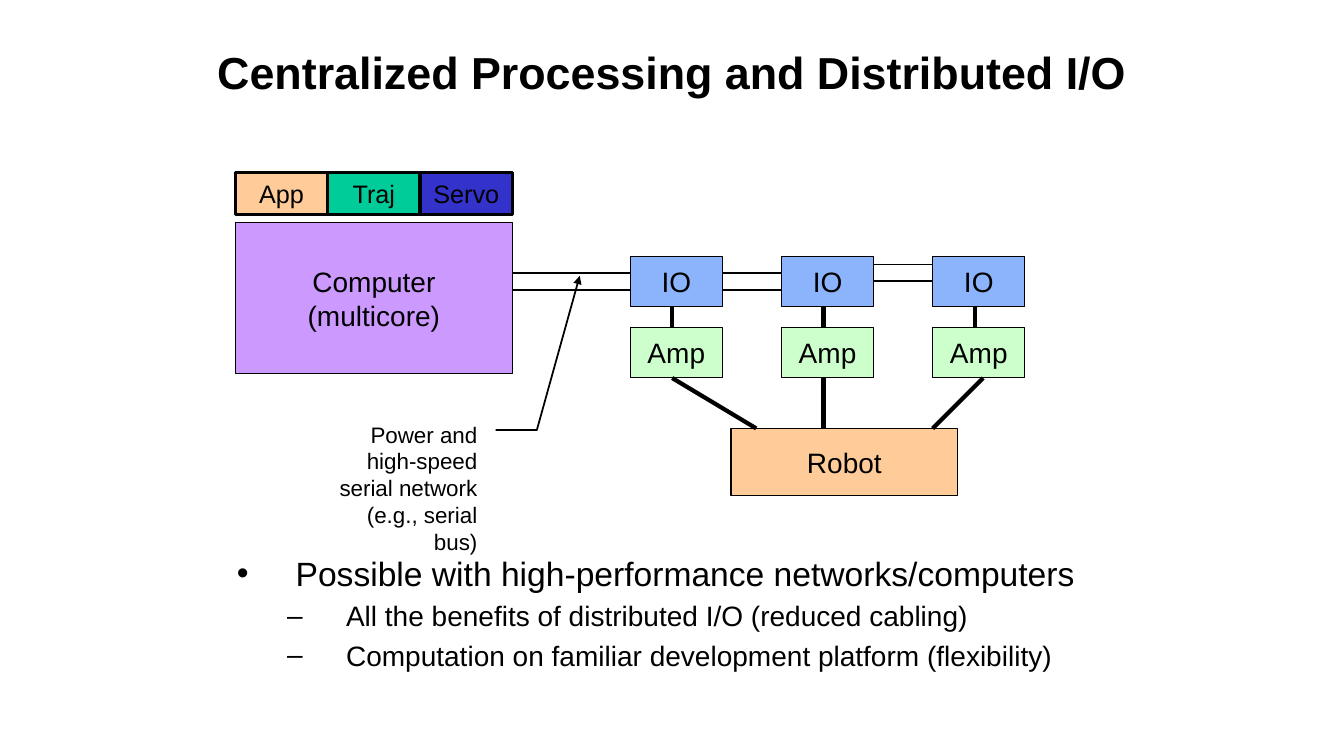
from lxml.etree import SubElement
from pptx import Presentation
from pptx.dml.color import RGBColor
from pptx.enum.shapes import MSO_CONNECTOR, MSO_SHAPE
from pptx.enum.text import MSO_ANCHOR, PP_ALIGN
from pptx.oxml.ns import qn
from pptx.util import Inches, Pt

HUES = {"ink": "000000", "computer": "CC99FF", "io": "8BB4FD", "amp": "CCFFCC",
        "peach": "FFCC99", "traj": "00CC99", "servo": "3333CC"}
INK = RGBColor.from_string(HUES["ink"])

deck = Presentation()
deck.slide_width, deck.slide_height = Inches(13.33), Inches(7.5)
slide = deck.slides.add_slide(deck.slide_layouts[5])
shapes = slide.shapes
UNIT = Inches(1) / 12  # grid step


def write(shape, text, size=20, bold=False, align=PP_ALIGN.CENTER,
          anchor=MSO_ANCHOR.MIDDLE, wrap=True, marks=""):
    frame = shape.text_frame
    frame.word_wrap = wrap
    frame.vertical_anchor = anchor
    frame.text = text
    for i, para in enumerate(frame.paragraphs):
        para.alignment = align
        if marks:
            para.level = min(i, 1)
            props = para._p.get_or_add_pPr()
            props.set("marL", str(int(UNIT * (13 if i else 7))))
            props.set("indent", str(int(-UNIT * 7)))
            SubElement(props, qn("a:buFont")).set("typeface", "Arial")
            SubElement(props, qn("a:buChar")).set("char", marks[i])
            if i:
                para.space_before = Pt(4)
        para.font.name = "Arial"
        para.font.size = Pt(size if i == 0 or not marks else size - 4)
        para.font.bold = bold
        para.font.color.rgb = INK


def draw(kind, *place, fill=None, width=0.75):
    a, b, c, d = [int(n * UNIT) for n in place]
    if kind == "line":
        item = shapes.add_connector(MSO_CONNECTOR.STRAIGHT, a, b, c, d)
        SubElement(item._element.spPr, qn("a:effectLst"))
    else:
        item = shapes.add_shape(kind, a, b, c, d)
        item.shadow.inherit = False
        if fill:
            item.fill.solid()
            item.fill.fore_color.rgb = RGBColor.from_string(HUES[fill])
        else:
            item.fill.background()
    item.line.color.rgb = INK
    item.line.width = Pt(width)
    return item


# Title
title = shapes.title
title.left, title.top, title.width, title.height = [
    int(n * UNIT) for n in (12, 3, 136, 11)]
write(title, "Centralized Processing and Distributed I/O", size=32, bold=True)

# Bullets
body = shapes.add_textbox(*[int(n * UNIT) for n in (27, 65.25, 105, 17)])
write(body, "Possible with high-performance networks/computers\n"
      "All the benefits of distributed I/O (reduced cabling)\n"
      "Computation on familiar development platform (flexibility)",
      size=24, align=PP_ALIGN.LEFT, anchor=MSO_ANCHOR.TOP, marks="•––")

# Computer and robot
BOX = MSO_SHAPE.RECTANGLE
host = draw(BOX, 28, 26.5, 33, 18, fill="computer")
write(host, "Computer\n(multicore)", wrap=False)
robot = draw(BOX, 87, 51, 27, 8, fill="peach")
write(robot, "Robot")

# Joints: IO over amp, bus rails from the left, cable to the robot
JOINTS = [(61, 32.5, 90, 80), (86, 32.5, 98, 98), (104, 31.5, 111, 117)]
for col, (start, rail, foot, top) in enumerate(JOINTS):
    left = 75 + 18 * col
    write(draw(BOX, left, 30.5, 11, 6, fill="io"), "IO", wrap=False)
    write(draw(BOX, left, 39, 11, 6, fill="amp"), "Amp")
    draw("line", left + 5, 39, left + 5, 36.5, width=3)
    draw("line", foot, 51, top, 45, width=3)
    for y in (rail, rail + 2):
        draw("line", start, y, left, y, width=1.25)

# Network callout
note = draw(MSO_SHAPE.LINE_CALLOUT_2_NO_BORDER, 38, 49.5, 20, 14.2, width=1.25)
for i, share in enumerate((0.12, 1.05, 0.12, 1.295, -1.173, 1.55)):
    note.adjustments[i] = share
SubElement(note.line._get_or_add_ln(), qn("a:tailEnd")).set("type", "triangle")
write(note, "Power and high-speed serial network (e.g., serial bus)", size=16,
      align=PP_ALIGN.RIGHT, anchor=MSO_ANCHOR.TOP)

# Tasks on the computer
for col, (name, hue) in enumerate((("App", "peach"), ("Traj", "traj"),
                                   ("Servo", "servo"))):
    task = draw(BOX, 28 + 11 * col, 20.5, 11, 5, fill=hue, width=2.25)
    write(task, name, size=18, wrap=False)

deck.save("out.pptx")
